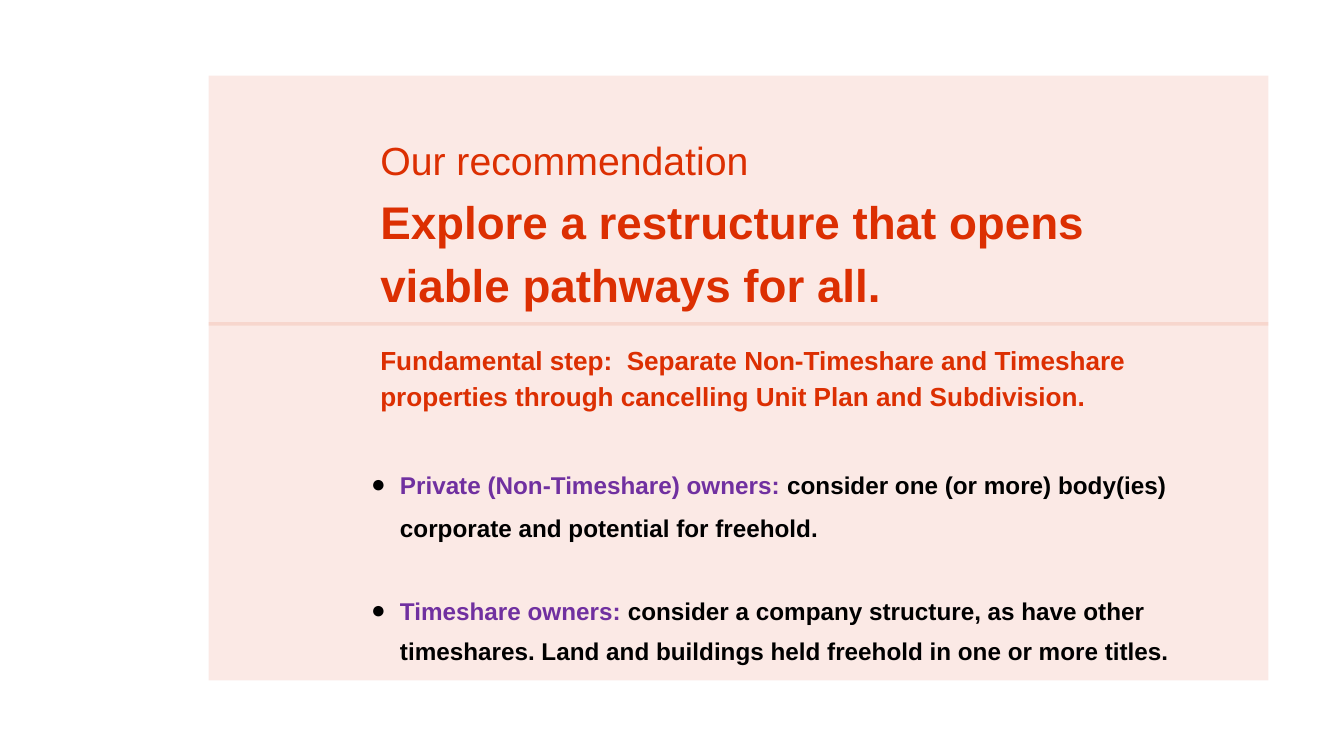
from lxml import etree
from pptx import Presentation
from pptx.dml.color import RGBColor
from pptx.enum.shapes import MSO_SHAPE
from pptx.enum.text import MSO_ANCHOR, MSO_AUTO_SIZE, PP_ALIGN
from pptx.oxml.ns import qn
from pptx.util import Pt

RECTANGLE = MSO_SHAPE.RECTANGLE
TOP = MSO_ANCHOR.TOP
NO_AUTOFIT = MSO_AUTO_SIZE.NONE
LEFT = PP_ALIGN.LEFT

FONT = "Arial"
RED, PURPLE, BLACK = "DC2F02", "7030A0", "000000"
PANEL_LEFT, PANEL_WIDTH = 223.5, 1135.5
TEXT_LEFT, TEXT_WIDTH = 407.5, 903

OWNERS = [
    ("Private (Non-Timeshare) owners: ",
     "consider one (or more) body(ies) corporate and potential for freehold.",
     1.5, 0),
    ("Timeshare owners: ",
     "consider a company structure, as have other timeshares. "
     "Land and buildings held freehold in one or more titles.",
     1.38, 45),
]


def rgb(color):
    return RGBColor.from_string(color)


def add_panel(s, top, height):
    """Add a red band at 10 % opacity; overlapping bands form a darker rule."""
    sp = s.shapes.add_shape(RECTANGLE, Pt(PANEL_LEFT), Pt(top),
                            Pt(PANEL_WIDTH), Pt(height))
    sp.shadow.inherit = False
    sp.line.fill.background()
    sp.fill.solid()
    sp.fill.fore_color.rgb = rgb(RED)
    color = sp.fill._xPr.find(qn("a:solidFill"))[0]
    etree.SubElement(color, qn("a:alpha"), val="10000")


def set_frame(sp, left, top, width, height):
    """Place a text shape, with no margins, and return its text frame."""
    sp.left, sp.top, sp.width, sp.height = map(Pt, (left, top, width, height))
    tf = sp.text_frame
    tf.word_wrap = True
    tf.auto_size = NO_AUTOFIT
    tf.vertical_anchor = TOP
    tf.margin_left = tf.margin_top = tf.margin_right = tf.margin_bottom = 0
    return tf


def format_paragraph(p, line_spacing, before=0):
    p.alignment = LEFT
    p.line_spacing = line_spacing
    p.space_before = Pt(before)
    p.space_after = Pt(0)


def add_run(p, text, size, color, bold=True):
    r = p.add_run()
    r.text = text
    r.font.name = FONT
    r.font.size = Pt(size)
    r.font.bold = bold
    r.font.color.rgb = rgb(color)


def add_bullet(p):
    pPr = p._p.get_or_add_pPr()
    pPr.set("marL", str(Pt(36)))
    pPr.set("indent", str(Pt(-31)))
    color = etree.SubElement(pPr, qn("a:buClr"))
    etree.SubElement(color, qn("a:srgbClr"), val=BLACK)
    etree.SubElement(pPr, qn("a:buFont"), typeface=FONT)
    etree.SubElement(pPr, qn("a:buChar"), char="●")


def write_line(sp, top, height, text, size, line_spacing, bold=True):
    tf = set_frame(sp, TEXT_LEFT, top, TEXT_WIDTH, height)
    p = tf.paragraphs[0]
    format_paragraph(p, line_spacing)
    add_run(p, text, size, RED, bold)


def write_owners(sp):
    tf = set_frame(sp, 392.5, 488, TEXT_WIDTH, 217)
    for i, (label, advice, line_spacing, before) in enumerate(OWNERS):
        p = tf.add_paragraph() if i else tf.paragraphs[0]
        format_paragraph(p, line_spacing, before)
        add_bullet(p)
        add_run(p, label, 26, PURPLE)
        add_run(p, advice, 26, BLACK)


def add_text_box(s):
    return s.shapes.add_textbox(0, 0, 0, 0)


def main():
    prs = Presentation()
    prs.slide_width, prs.slide_height = Pt(1440), Pt(810)
    s = prs.slides.add_slide(prs.slide_layouts[1])
    title, body = s.placeholders

    add_panel(s, 81, 268)
    add_panel(s, 345, 384)
    for sp in (title, body):  # bring the text in front of the panels
        s.shapes._spTree.append(sp._element)

    write_line(add_text_box(s), 135.5, 52, "Our recommendation", 42, 1.2,
               bold=False)
    write_line(title, 198.5, 127.5,
               "Explore a restructure that opens viable pathways for all.",
               49, 1.15)
    write_line(add_text_box(s), 363.5, 73,
               "Fundamental step:  Separate Non-Timeshare and Timeshare "
               "properties through cancelling Unit Plan and Subdivision.",
               28, 1.15)
    write_owners(body)
    prs.save("out.pptx")


if __name__ == "__main__":
    main()
